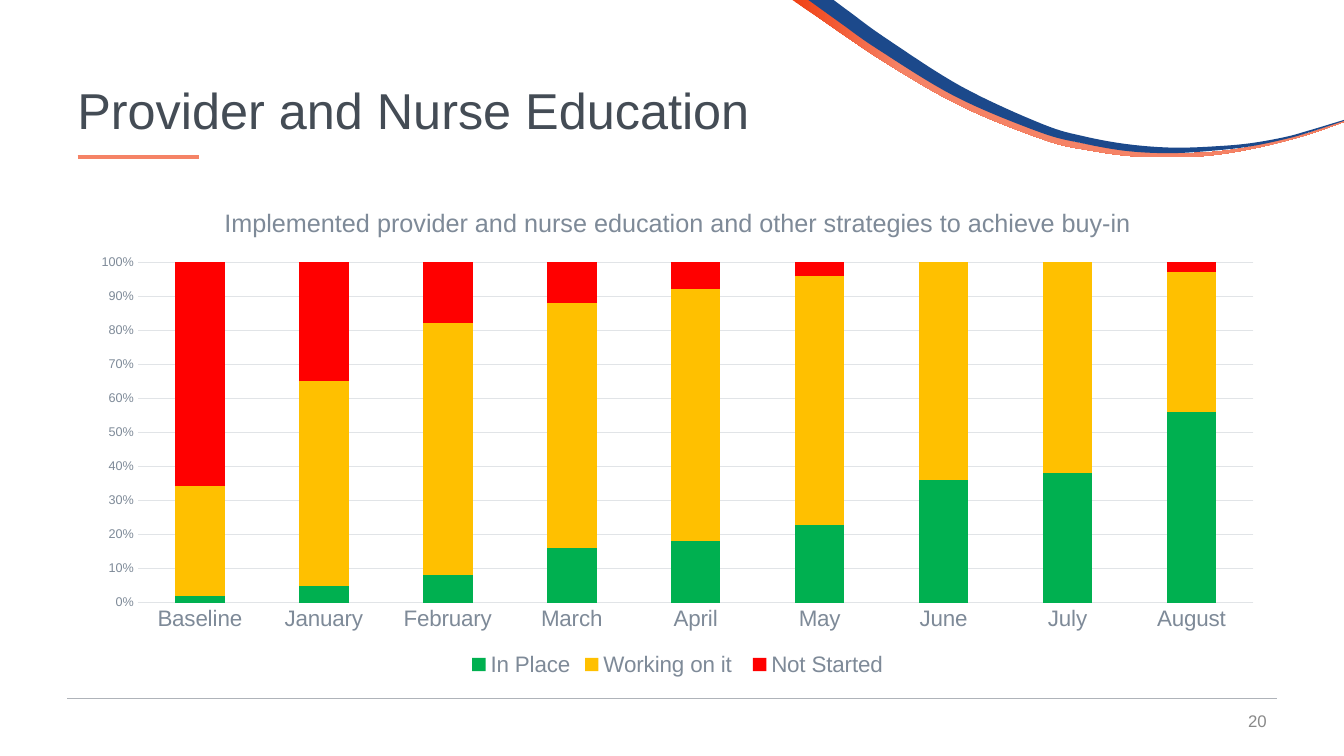
from pptx import Presentation
from pptx.chart.data import CategoryChartData as Data
from pptx.dml.color import RGBColor as Rgb
from pptx.enum.chart import XL_CHART_TYPE as Kind, XL_LEGEND_POSITION as Spot, XL_TICK_MARK as Tick
from pptx.enum.shapes import MSO_CONNECTOR as Link
from pptx.enum.text import MSO_ANCHOR as Anchor, MSO_AUTO_SIZE as Fit, PP_ALIGN as Align
from pptx.oxml.ns import qn
from pptx.util import Pt
from lxml import etree


def paint(fmt, tint):
    """Give a fill, or the fill of a line, one solid colour."""
    fmt.solid()
    fmt.fore_color.rgb = Rgb.from_string(tint)


def style(font, size, tint):
    look = {"name": "Arial", "size": Pt(size), "bold": False}
    for key, val in look.items():
        setattr(font, key, val)
    paint(font.fill, tint)


show = Presentation()
show.slide_width, show.slide_height = Pt(960), Pt(540)
slide = show.slides.add_slide(show.slide_layouts[5])
shapes = slide.shapes
paint(slide.background.fill, "FFFFFF")

# Ribbon: each band has an upper edge and a lower edge, as knots in points
bands = {
    "F58366": (
        [(579.6, 0), (583.2, 2.9), (635, 38.9), (689.8, 71.3), (748.1, 95.8),
         (778.3, 103.7), (810, 108), (841, 109.4), (864.7, 108.7), (888.5, 105.8),
         (912.2, 100.8), (935.3, 95), (960, 86.4)],
        [(960, 87.1), (935.3, 95.8), (912.2, 102.2), (889.2, 107.3), (865.4, 110.9),
         (841.7, 112.3), (809.3, 111.6), (777.6, 107.3), (746.6, 100.1),
         (687.6, 76.3), (632.2, 44.6), (578.9, 8.6), (566, 0)]),
    "1C498B": (
        [(595.4, 0), (607, 8.6), (632.9, 27.4), (686.9, 61.9), (744.5, 88.6),
         (775.2, 97.6), (806.7, 103.2), (838.6, 105.5), (870.5, 104.4),
         (894.2, 102.2), (918, 97.9), (933.8, 93.6), (960, 85.7)],
        [(960, 86.4), (933.8, 95), (918, 99.4), (894.2, 104.4), (870.5, 107.3),
         (838.1, 109.4), (805.7, 108), (773.7, 102.5), (742.3, 94.3),
         (682.6, 69.1), (627.1, 35.3), (600.5, 16.6), (577.4, 0)]),
}
steps = 8
for tint, edges in bands.items():
    dots = []
    for edge in edges:
        # Smooth curve through the knots
        knots = [edge[0], *edge, edge[-1]]
        dots.append(edge[0])
        for a, b, c, d in zip(knots, knots[1:], knots[2:], knots[3:]):
            for n in range(1, steps + 1):
                t = n / steps
                dots.append(tuple(
                    q + t / 2 * (r - p + t * (2 * p - 5 * q + 4 * r - s
                                              + t * (3 * q - p - 3 * r + s)))
                    for p, q, r, s in zip(a, b, c, d)))
    dots = [(Pt(x), Pt(max(y, 0))) for x, y in dots]
    pen = shapes.build_freeform(*dots[0])
    pen.add_line_segments(dots[1:], close=True)
    band = pen.convert_to_shape()
    band.shadow.inherit = False
    band.line.fill.background()
    paint(band.fill, tint)
    if tint == "F58366":
        band.fill.gradient()
        band.fill.gradient_angle = 0
        for stop, (place, shade) in zip(band.fill.gradient_stops,
                                        [(0, "F04115"), (0.2, tint)]):
            stop.position = place
            stop.color.rgb = Rgb.from_string(shade)

# Footer rule and title accent
for left, right, top, tint, width in [(48, 912, 499, "AFB3B9", 0.5),
                                      (55.5, 142, 112, "F58366", 2.5)]:
    rule = shapes.add_connector(Link.STRAIGHT, Pt(left), Pt(top), Pt(right), Pt(top))
    paint(rule.line.fill, tint)
    rule.line.width = Pt(width)
    etree.SubElement(rule._element.spPr, qn("a:effectLst"))

# Title and page number
title = shapes.title
page = shapes.add_textbox(Pt(696), Pt(500.5), Pt(216), Pt(29))
box = {"left": Pt(48), "top": Pt(29), "width": Pt(864), "height": Pt(104)}
for key, val in box.items():
    setattr(title, key, val)
for item, words, side, size, tint in [
        (title, "Provider and Nurse Education", Align.LEFT, 36, "444C55"),
        (page, "20", Align.RIGHT, 12, "898989")]:
    frame = item.text_frame
    frame.text = words
    form = {"word_wrap": True, "auto_size": Fit.NONE, "vertical_anchor": Anchor.MIDDLE}
    for key, val in form.items():
        setattr(frame, key, val)
    frame.paragraphs[0].alignment = side
    style(frame.paragraphs[0].runs[0].font, size, tint)
title.text_frame.paragraphs[0].line_spacing = 0.9

# Chart data
data = Data()
data.categories = ["Baseline", "January", "February", "March", "April",
                   "May", "June", "July", "August"]
rows = [("In Place", "00B050", [2, 5, 8, 16, 18, 23, 36, 38, 56]),
        ("Working on it ", "FFC000", [32, 60, 74, 72, 74, 74, 64, 62, 41]),
        ("Not Started", "FF0000", [65, 35, 18, 12, 8, 4, 0, 0, 3])]
for name, tint, vals in rows:
    data.add_series(name, vals)
chart = shapes.add_chart(Kind.COLUMN_STACKED_100, Pt(55.5), Pt(133), Pt(857),
                         Pt(353.5), data).chart
style(chart.font, 10, "444C55")

# Columns
plot = chart.plots[0]
for key, val in {"gap_width": 150, "overlap": 100, "vary_by_categories": False}.items():
    setattr(plot, key, val)
for bar, (name, tint, vals) in zip(plot.series, rows):
    paint(bar.format.fill, tint)
    bar.invert_if_negative = False

# Chart title and legend
chart.has_title = True
head = chart.chart_title
head.include_in_layout = False
head.text_frame.text = "Implemented provider and nurse education and other strategies to achieve buy-in"
style(head.text_frame.paragraphs[0].runs[0].font, 18, "7E8A98")
chart.has_legend = True
key_box = chart.legend
key_box.position = Spot.BOTTOM
key_box.include_in_layout = False
style(key_box.font, 16, "7E8A98")

# Axes
cat, val_ax = chart.category_axis, chart.value_axis
for axis, size in [(cat, 16), (val_ax, 9)]:
    axis.major_tick_mark = axis.minor_tick_mark = Tick.NONE
    style(axis.tick_labels.font, size, "7E8A98")
val_ax.has_major_gridlines = True
val_ax.major_unit = 0.1
val_ax.tick_labels.number_format = "0%"
val_ax.tick_labels.number_format_is_linked = False
val_ax.format.line.fill.background()
for line in (cat.format.line, val_ax.major_gridlines.format.line):
    paint(line.fill, "E1E4E7")
    line.width = Pt(0.75)

show.save("out.pptx")
